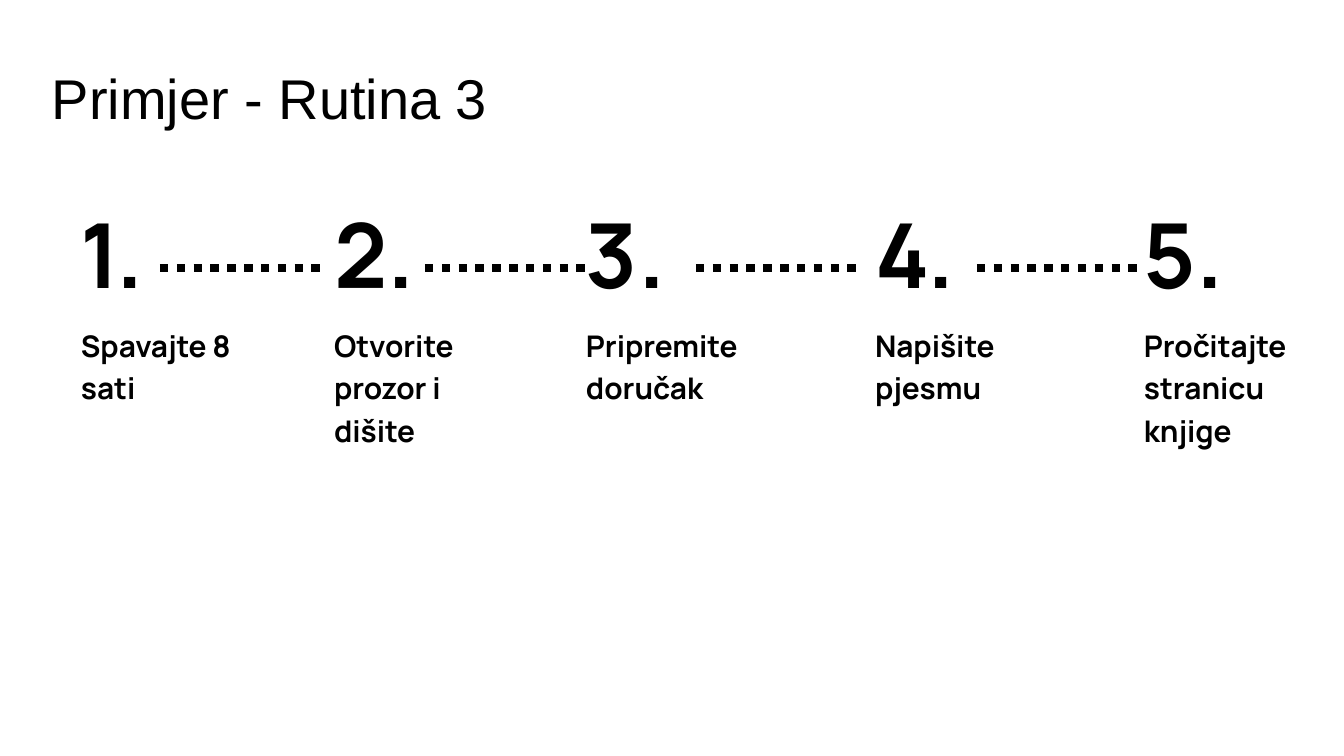
"""Build the slide showing a five-step example routine."""
from lxml import etree
from pptx import Presentation
from pptx.dml.color import RGBColor
from pptx.enum.dml import MSO_LINE
from pptx.enum.shapes import MSO_CONNECTOR
from pptx.enum.text import MSO_ANCHOR
from pptx.oxml.ns import qn
from pptx.util import Pt

STRAIGHT = MSO_CONNECTOR.STRAIGHT
DOTTED = MSO_LINE.ROUND_DOT
TOP, MIDDLE = MSO_ANCHOR.TOP, MSO_ANCHOR.MIDDLE
EMU_PER_PX = 914400 / 100.8
COLORS = {"ink": "000000", "paper": "FFFFFF"}

TITLE = {"name": "Arial", "size": Pt(40), "bold": False}
NUMBER = {"name": "Manrope", "size": Pt(64), "bold": True}
CAPTION = {"name": "Manrope", "size": Pt(21.3), "bold": True}

STEP_TOP = 164
STEPS = [
    (68, 217, 249, "Spavajte 8 sati"),
    (321, 166, 449, "Otvorite prozor i dišite"),
    (573, 232, 292, "Pripremite doručak"),
    (862, 228, 249, "Napišite pjesmu"),
    (1131, 228, 249, "Pročitajte stranicu knjige"),
]
TRAIL_STARTS = [160, 425, 696, 977]
TRAIL_LENGTH, TRAIL_Y = 167, 268


def px(length):
    return round(length * EMU_PER_PX)


def color(name):
    return RGBColor.from_string(COLORS[name])


class RoutineSlide:
    def __init__(self, deck):
        self.slide = deck.slides.add_slide(deck.slide_layouts[6])
        background = self.slide.background.fill
        background.solid()
        background.fore_color.rgb = color("paper")

    def text(self, box, lines, spacing, insets, anchor=TOP, gap=0):
        frame = self.slide.shapes.add_textbox(*map(px, box)).text_frame
        side, edge = map(px, insets)
        layout = {"word_wrap": True, "vertical_anchor": anchor,
                  "margin_left": side, "margin_right": side,
                  "margin_top": edge, "margin_bottom": edge}
        for key, value in layout.items():
            setattr(frame, key, value)
        for index, (words, style) in enumerate(lines):
            paragraph = frame.add_paragraph() if index else frame.paragraphs[0]
            paragraph.line_spacing = spacing
            paragraph.space_before = Pt(gap if index else 0)
            run = paragraph.add_run()
            run.text = words
            for key, value in style.items():
                setattr(run.font, key, value)
            run.font.color.rgb = color("ink")

    def step(self, number, left, width, height, caption):
        self.text((left, STEP_TOP, width, height),
                  [(f"{number}.", NUMBER), (caption, CAPTION)],
                  spacing=1.2, insets=(13, 13), gap=10)

    def trail(self, start):
        trail = self.slide.shapes.add_connector(
            STRAIGHT, px(start), px(TRAIL_Y), px(start + TRAIL_LENGTH), px(TRAIL_Y))
        trail.line.color.rgb = color("ink")
        trail.line.width = Pt(6)
        trail.line.dash_style = DOTTED
        etree.SubElement(trail._element.spPr, qn("a:effectLst"))


def main():
    deck = Presentation()
    deck.slide_width, deck.slide_height = px(1344), px(756)
    routine = RoutineSlide(deck)
    routine.text((42, 40, 1241, 123), [("Primjer - Rutina 3", TITLE)],
                 spacing=0.9, insets=(10, 5), anchor=MIDDLE)
    for number, step in enumerate(STEPS, start=1):
        routine.step(number, *step)
    for start in TRAIL_STARTS:
        routine.trail(start)
    deck.save("out.pptx")


if __name__ == "__main__":
    main()
